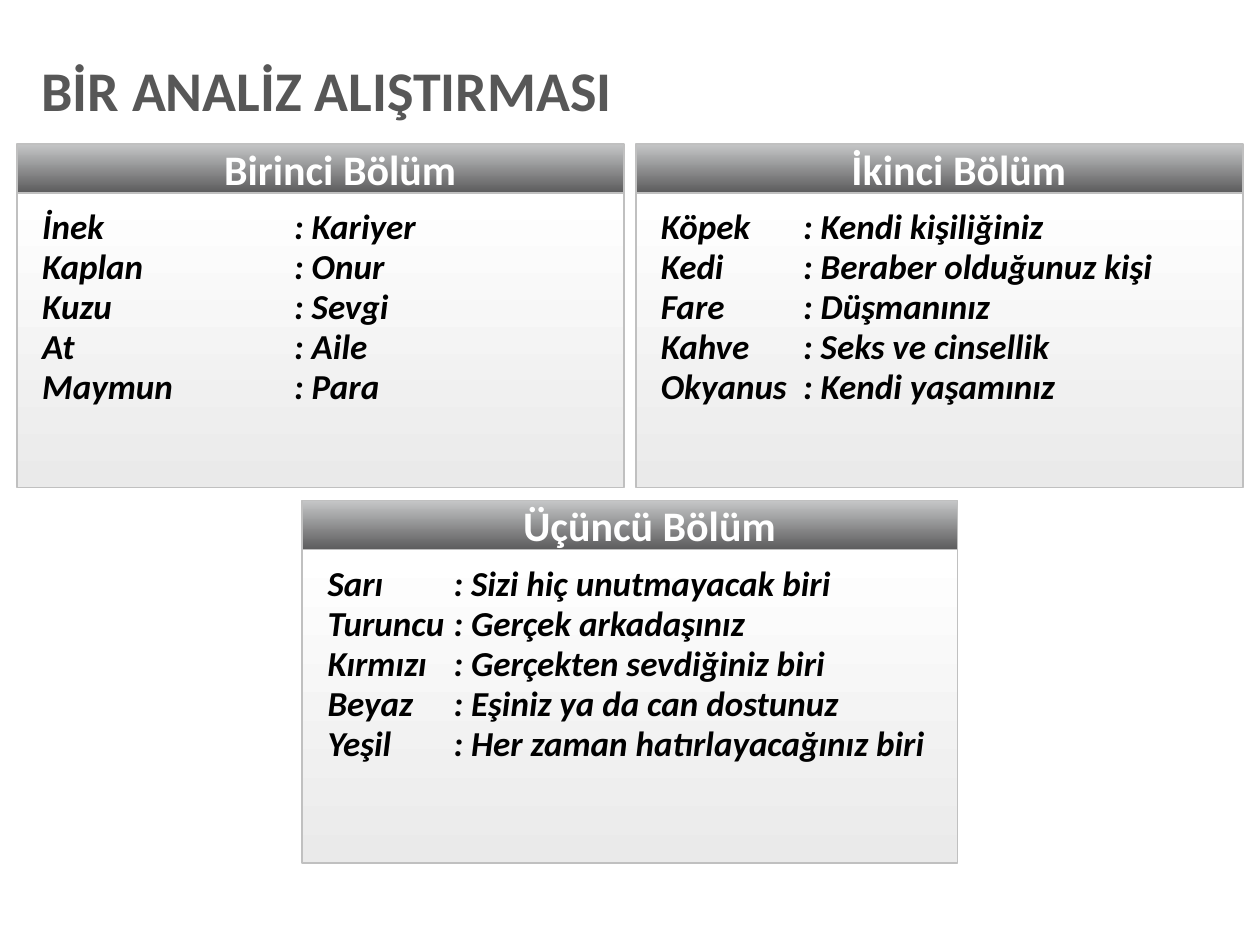
from lxml.etree import SubElement
from pptx import Presentation
from pptx.dml.color import RGBColor
from pptx.enum.shapes import MSO_SHAPE as Shape
from pptx.enum.text import MSO_ANCHOR as Anchor, PP_ALIGN as Align
from pptx.oxml.ns import qn
from pptx.util import Inches, Pt

COLORS = {
    "grey": "575757", "white": "FFFFFF", "black": "000000",
    "border": "C0C0C0", "header_top": "C6C7C8", "header_end": "5C5C5D",
    "body_end": "EAEAEA",
}

deck = Presentation()
deck.slide_width, deck.slide_height = Inches(10), Inches(7.5)
page = deck.slides.add_slide(deck.slide_layouts[6])
column, row = deck.slide_width / 100, deck.slide_height / 100


def set_frame(box, margins, anchor=Anchor.TOP):
    frame = box.text_frame
    frame.word_wrap = True
    frame.vertical_anchor = anchor
    (frame.margin_left, frame.margin_top,
     frame.margin_right, frame.margin_bottom) = [Inches(m) for m in margins]
    return frame


def style(font, size, color, italic=False):
    font.name, font.size = "Calibri", Pt(size)
    font.bold, font.italic = True, italic
    font.color.rgb = RGBColor.from_string(COLORS[color])


title = page.shapes.add_textbox(
    int(3.3 * column), int(6 * row), int(93.2 * column), int(9.47 * row))
para = set_frame(title, (0, 0.05, 0, 0.05)).paragraphs[0]
para.text = "BİR ANALİZ ALIŞTIRMASI"
para.line_spacing = 0.9
style(para.runs[0].font, 32, "grey")

panels = [
    ("Birinci Bölüm", 1.35, 15.2, 48.2, 31.2, 2, [
        ("İnek", "Kariyer"), ("Kaplan", "Onur"), ("Kuzu", "Sevgi"),
        ("At", "Aile"), ("Maymun", "Para")]),
    ("İkinci Bölüm", 50.45, 15.2, 48.2, 31.2, 1.13, [
        ("Köpek", "Kendi kişiliğiniz"), ("Kedi", "Beraber olduğunuz kişi"),
        ("Fare", "Düşmanınız"), ("Kahve", "Seks ve cinsellik"),
        ("Okyanus", "Kendi yaşamınız")]),
    ("Üçüncü Bölüm", 24, 52.95, 52, 33.2, 1, [
        ("Sarı", "Sizi hiç unutmayacak biri"), ("Turuncu", "Gerçek arkadaşınız"),
        ("Kırmızı", "Gerçekten sevdiğiniz biri"),
        ("Beyaz", "Eşiniz ya da can dostunuz"),
        ("Yeşil", "Her zaman hatırlayacağınız biri")]),
]
header_height = 5.2

for heading, left, top, width, body_height, tab, entries in panels:
    boxes = []
    for box_top, height, shades in (
            (top, header_height, ("header_top", "header_end")),
            (top + header_height, body_height, ("white", "body_end"))):
        box = page.shapes.add_shape(
            Shape.RECTANGLE, int(left * column), int(box_top * row),
            int(width * column), int(height * row))
        box.shadow.inherit = False
        box.fill.gradient()
        box.fill.gradient_angle = 270
        for stop, shade in zip(box.fill.gradient_stops, shades):
            stop.color.rgb = RGBColor.from_string(COLORS[shade])
        box.line.color.rgb = RGBColor.from_string(COLORS["border"])
        box.line.width = Pt(1)
        boxes.append(box)

    header, body = boxes
    para = set_frame(header, (0.31, 0, 0, 0), Anchor.MIDDLE).paragraphs[0]
    para.text = heading
    para.alignment = Align.CENTER
    style(para.runs[0].font, 24, "white")

    frame = set_frame(body, (0.2, 0.12, 0.16, 0.08))
    frame.text = "\n".join(f"{symbol}\t: {meaning}" for symbol, meaning in entries)
    for para in frame.paragraphs:
        tabs = SubElement(para._p.get_or_add_pPr(), qn("a:tabLst"))
        SubElement(tabs, qn("a:tab"), pos=str(Inches(tab)), algn="l")
        para.alignment = Align.LEFT
        para.line_spacing = 0.95
        style(para.runs[0].font, 20, "black", italic=True)

deck.save("out.pptx")
